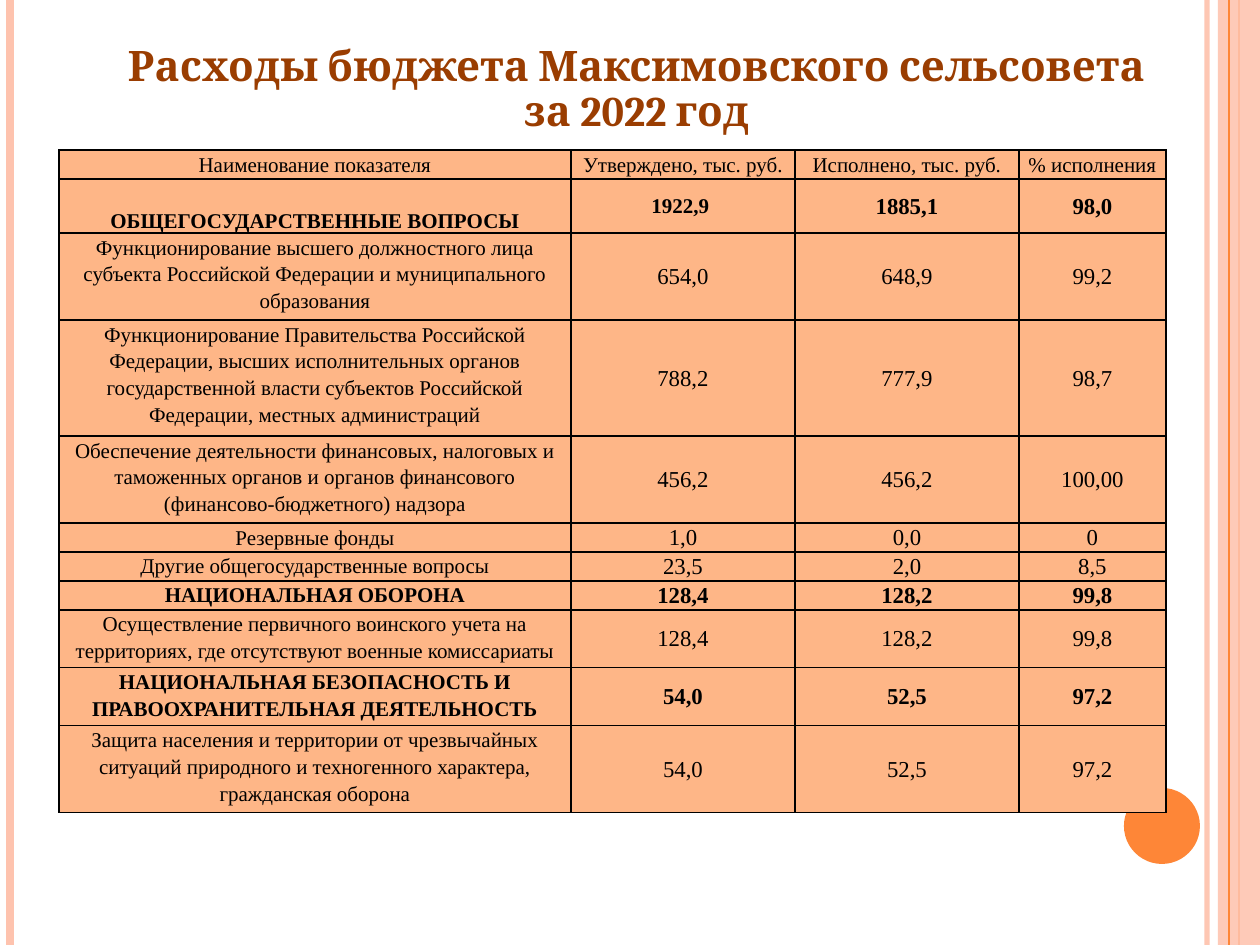
from dataclasses import dataclass

from lxml import etree
from pptx import Presentation
from pptx import util as u
from pptx.dml.color import RGBColor
from pptx.enum import shapes, text
from pptx.oxml.ns import qn

SCALE = 914400 / 126


@dataclass(frozen=True)
class Theme:
    pale: str = "FEC3AE"
    accent: str = "FE8637"
    cell: str = "FEB687"
    heading: str = "9A3D01"
    ink: str = "000000"
    title_font: str = "Cambria"
    body_font: str = "Times New Roman"
    title_size: int = 24
    label_size: int = 12
    value_size: int = 13


def px(length):
    return u.Emu(round(length * SCALE))


def rgb(color):
    return RGBColor.from_string(color)


def write(frame, words, *, font, size, color, bold=False, spacing=1.0):
    para = frame.paragraphs[0]
    para.alignment = text.PP_ALIGN.CENTER
    para.line_spacing = spacing
    para.space_before = para.space_after = u.Pt(0)
    span = para.add_run()
    span.text = words
    span.font.name = font
    span.font.size = u.Pt(size)
    span.font.bold = bold
    span.font.color.rgb = rgb(color)


def fade(fill, percent):
    color = fill.find(".//" + qn("a:srgbClr"))
    etree.SubElement(color, qn("a:alpha"), val=str(percent * 1000))


class SlideBuilder:
    """Draws themed elements on the current slide."""

    def __init__(self, slide, theme):
        self.slide = slide
        self.theme = theme

    def title(self, words, left, top, width, height):
        box = self.slide.shapes.title
        box.left, box.top, box.width, box.height = map(px, (left, top, width, height))
        frame = box.text_frame
        frame.word_wrap = True
        frame.auto_size = text.MSO_AUTO_SIZE.NONE
        frame.vertical_anchor = text.MSO_ANCHOR.TOP
        write(frame, words, font=self.theme.title_font, size=self.theme.title_size,
              color=self.theme.heading, bold=True, spacing=0.9)

    def stripe(self, x, color, weight, opacity=100):
        line = self.slide.shapes.add_connector(
            shapes.MSO_CONNECTOR.STRAIGHT, px(x), 0, px(x), px(945))
        line.line.color.rgb = rgb(color)
        line.line.width = u.Pt(weight)
        properties = line._element.spPr
        if opacity < 100:
            fade(properties, opacity)
        etree.SubElement(properties, qn("a:effectLst"))

    def shape(self, kind, left, top, width, height, color, opacity=100):
        shape = self.slide.shapes.add_shape(kind, *map(px, (left, top, width, height)))
        shape.shadow.inherit = False
        shape.fill.solid()
        shape.fill.fore_color.rgb = rgb(color)
        shape.line.fill.background()
        if opacity < 100:
            fade(shape._element.spPr, opacity)

    def border(self, cell):
        properties = cell._tc.get_or_add_tcPr()
        for index, side in enumerate(("lnL", "lnR", "lnT", "lnB")):
            line = etree.Element(qn("a:" + side), w=str(u.Pt(1)))
            fill = etree.SubElement(line, qn("a:solidFill"))
            etree.SubElement(fill, qn("a:srgbClr"), val=self.theme.ink)
            properties.insert(index, line)

    def cell(self, cell, words, *, label, bold, size, anchor):
        side = 2 if label else 1
        cell.margin_left = cell.margin_right = px(side)
        cell.margin_top = px(0 if label else 1)
        cell.margin_bottom = 0
        cell.vertical_anchor = anchor
        cell.fill.solid()
        cell.fill.fore_color.rgb = rgb(self.theme.cell)
        self.border(cell)
        write(cell.text_frame, words, font=self.theme.body_font, size=size,
              color=self.theme.ink, bold=bold, spacing=1.15 if label else 1.0)

    def table(self, left, top, columns, heights, rows):
        table = self.slide.shapes.add_table(
            len(rows), len(columns), px(left), px(top),
            px(sum(columns)), px(sum(heights))).table
        table.first_row = table.horz_banding = False
        for column, width in zip(table.columns, columns):
            column.width = px(width)
        for r, (row, height) in enumerate(zip(rows, heights)):
            table.rows[r].height = px(height)
            for c, words in enumerate(row):
                label = r == 0 or c == 0
                small = label or (r, c) == (1, 1)
                anchor = text.MSO_ANCHOR.TOP if label else text.MSO_ANCHOR.MIDDLE
                if (r, c) == (1, 0):
                    anchor = text.MSO_ANCHOR.BOTTOM
                self.cell(table.cell(r, c), words, label=label,
                          bold=r > 0 and row[0].isupper(), anchor=anchor,
                          size=self.theme.label_size if small else self.theme.value_size)


ROWS = [
    ("Наименование показателя", "Утверждено, тыс. руб.", "Исполнено, тыс. руб.", "% исполнения"),
    ("ОБЩЕГОСУДАРСТВЕННЫЕ ВОПРОСЫ", "1922,9 ", "1885,1", "98,0"),
    ("Функционирование высшего должностного лица субъекта Российской Федерации "
     "и муниципального образования", "654,0", "648,9", "99,2"),
    ("Функционирование Правительства Российской Федерации, высших исполнительных "
     "органов государственной власти субъектов Российской Федерации, местных "
     "администраций", "788,2", "777,9", "98,7"),
    ("Обеспечение деятельности финансовых, налоговых и таможенных органов и "
     "органов финансового (финансово-бюджетного) надзора", "456,2", "456,2", "100,00"),
    ("Резервные фонды", "1,0", "0,0", "0"),
    ("Другие общегосударственные вопросы", "23,5", "2,0", "8,5"),
    ("НАЦИОНАЛЬНАЯ ОБОРОНА", "128,4", "128,2", "99,8"),
    ("Осуществление первичного воинского учета на территориях, где отсутствуют "
     "военные комиссариаты", "128,4", "128,2", "99,8"),
    ("НАЦИОНАЛЬНАЯ БЕЗОПАСНОСТЬ И ПРАВООХРАНИТЕЛЬНАЯ ДЕЯТЕЛЬНОСТЬ", "54,0", "52,5", "97,2"),
    ("Защита населения и территории от чрезвычайных ситуаций природного и "
     "техногенного характера, гражданская оборона", "54,0", "52,5", "97,2"),
]
HEIGHTS = [29, 54, 87, 116, 87, 29, 29, 29, 58, 58, 87]


def main():
    deck = Presentation()
    deck.slide_width, deck.slide_height = px(1260), px(945)
    theme = Theme()
    page = SlideBuilder(deck.slides.add_slide(deck.slide_layouts[5]), theme)
    page.stripe(1207, theme.pale, 3, opacity=93)
    page.stripe(10, theme.pale, 4.5)
    page.stripe(1239, theme.accent, 1.5)
    page.shape(shapes.MSO_SHAPE.RECTANGLE, 1218, 0, 42, 945, theme.pale, opacity=87)
    page.stripe(1229, theme.accent, 0.75)
    page.shape(shapes.MSO_SHAPE.OVAL, 1124, 788, 76, 76, theme.accent)
    page.title("Расходы бюджета Максимовского сельсовета за 2022 год", 108, 39, 1057, 165)
    page.table(59, 150, [512, 224, 224, 147], HEIGHTS, ROWS)
    deck.save("out.pptx")


if __name__ == "__main__":
    main()
